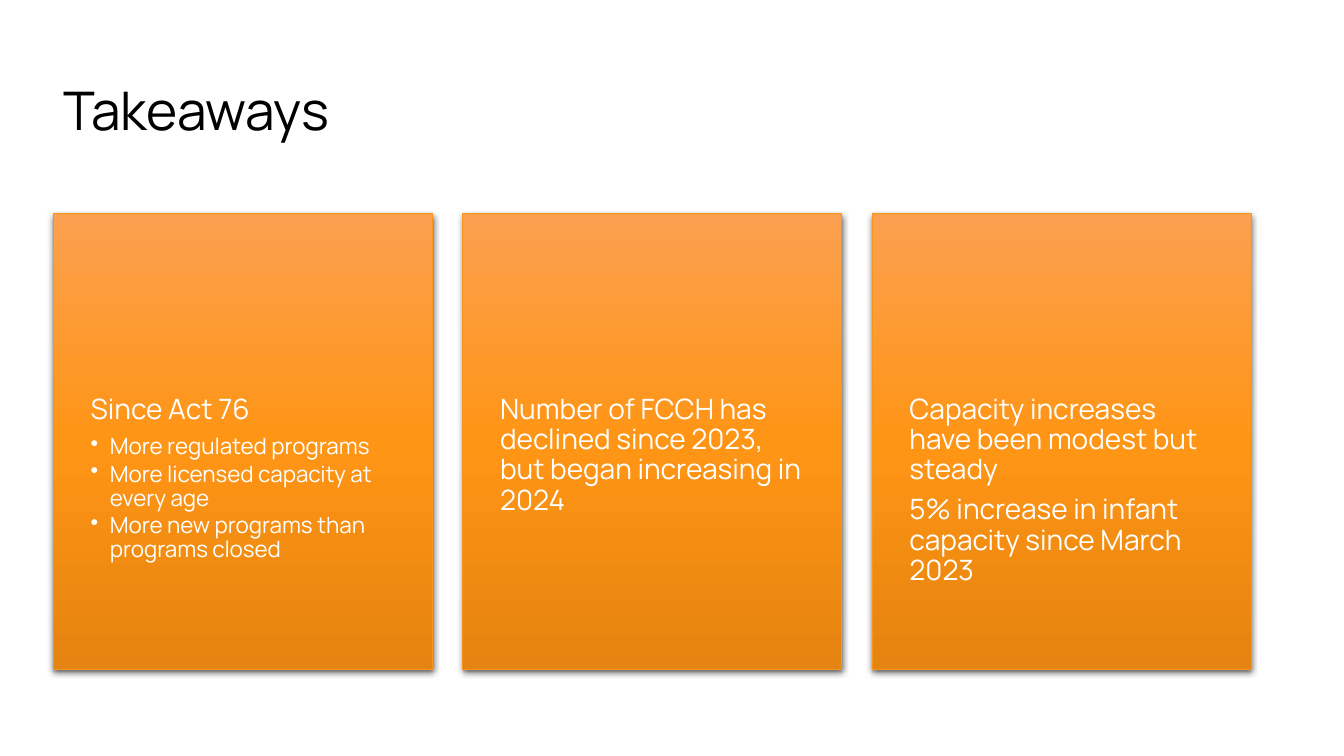
from copy import deepcopy
from dataclasses import dataclass

from pptx import Presentation
from pptx.dml.color import RGBColor
from pptx.enum.text import MSO_ANCHOR
from pptx.enum.shapes import MSO_SHAPE
from pptx.oxml import parse_xml
from pptx.oxml.ns import nsdecls, qn
from pptx.shapes.autoshape import Shape
from pptx.shapes.shapetree import GroupShapes
from pptx.text.text import _Paragraph as Paragraph
from pptx.util import Inches, Pt

FONT = "Manrope"
BLACK = RGBColor(0x00, 0x00, 0x00)
WHITE = RGBColor(0xFF, 0xFF, 0xFF)
EDGE = RGBColor(0xF7, 0x94, 0x1D)
GRADIENT = [
    (0.0, RGBColor(0xFB, 0xA0, 0x4F)),
    (0.5, RGBColor(0xFF, 0x95, 0x15)),
    (1.0, RGBColor(0xE5, 0x84, 0x10)),
]

LEFT, CARD_TOP, TEXT_TOP = 0.53, 2.12, 3.92
CARD_WIDTH, CARD_HEIGHT, TEXT_HEIGHT = 3.76, 4.52, 2.71
CARD_PITCH = 4.06
BULLET_INDENT = Inches(0.19)


@dataclass
class Line:
    text: str
    bulleted: bool = False


CARDS: list[list[Line]] = [
    [
        Line("Since Act 76"),
        Line("More regulated programs", bulleted=True),
        Line("More licensed capacity at every age", bulleted=True),
        Line("More new programs than programs closed", bulleted=True),
    ],
    [Line("Number of FCCH has declined since 2023, but began increasing in 2024")],
    [
        Line("Capacity increases have been modest but steady"),
        Line("5% increase in infant capacity since March 2023"),
    ],
]


def style_text(para: Paragraph, size: float, color: RGBColor) -> None:
    para.line_spacing = 0.9
    para.font.name = FONT
    para.font.size = Pt(size)
    para.font.color.rgb = color


def add_bullet(para: Paragraph) -> None:
    properties = para._p.get_or_add_pPr()
    properties.set("marL", str(BULLET_INDENT))
    properties.set("indent", str(-BULLET_INDENT))
    properties.append(parse_xml(f'<a:buChar {nsdecls("a")} char="•"/>'))


def fill_gradient(panel: Shape) -> None:
    """Fill the panel from top to bottom with the GRADIENT stops."""
    panel.fill.gradient()
    panel.fill.gradient_angle = 270
    stop_list = panel._element.spPr.find(".//" + qn("a:gsLst"))
    stop_list.append(deepcopy(stop_list[0]))
    for stop, (position, color) in zip(panel.fill.gradient_stops, GRADIENT):
        stop.position = position
        stop.color.rgb = color


def add_shadow(panel: Shape) -> None:
    panel.shadow.inherit = False
    panel._element.spPr.find(qn("a:effectLst")).append(parse_xml(
        f'<a:outerShdw {nsdecls("a")} blurRad="{Pt(4.5)}" dist="{Pt(1.5)}" '
        'dir="5400000" rotWithShape="0"><a:srgbClr val="000000">'
        '<a:alpha val="63000"/></a:srgbClr></a:outerShdw>'
    ))


def add_card(shapes: GroupShapes, left: float, lines: list[Line]) -> None:
    panel = shapes.add_shape(
        MSO_SHAPE.RECTANGLE,
        Inches(left), Inches(CARD_TOP), Inches(CARD_WIDTH), Inches(CARD_HEIGHT),
    )
    fill_gradient(panel)
    panel.line.color.rgb = EDGE
    panel.line.width = Pt(0.5)
    add_shadow(panel)

    box = shapes.add_textbox(
        Inches(left), Inches(TEXT_TOP), Inches(CARD_WIDTH), Inches(TEXT_HEIGHT)
    )
    frame = box.text_frame
    frame.word_wrap = True
    frame.margin_left = frame.margin_right = Inches(0.37)
    frame.margin_top, frame.margin_bottom = 0, Inches(0.36)
    frame.text = "\n".join(line.text for line in lines)
    for para, line in zip(frame.paragraphs, lines):
        para.space_after = Pt(2.4 if line.bulleted else 7)
        if line.bulleted:
            para.level = 1
            add_bullet(para)
        style_text(para, 16 if line.bulleted else 20, WHITE)


def main() -> None:
    deck = Presentation()
    deck.slide_width, deck.slide_height = Inches(13.33), Inches(7.5)
    page = deck.slides.add_slide(deck.slide_layouts[6])

    title = page.shapes.add_textbox(
        Inches(LEFT), Inches(0.4), Inches(11.89), Inches(1.45)
    ).text_frame
    title.word_wrap = True
    title.vertical_anchor = MSO_ANCHOR.MIDDLE
    title.text = "Takeaways"
    style_text(title.paragraphs[0], 38, BLACK)

    group = page.shapes.add_group_shape()
    for index, lines in enumerate(CARDS):
        add_card(group.shapes, LEFT + index * CARD_PITCH, lines)

    deck.save("out.pptx")


if __name__ == "__main__":
    main()
